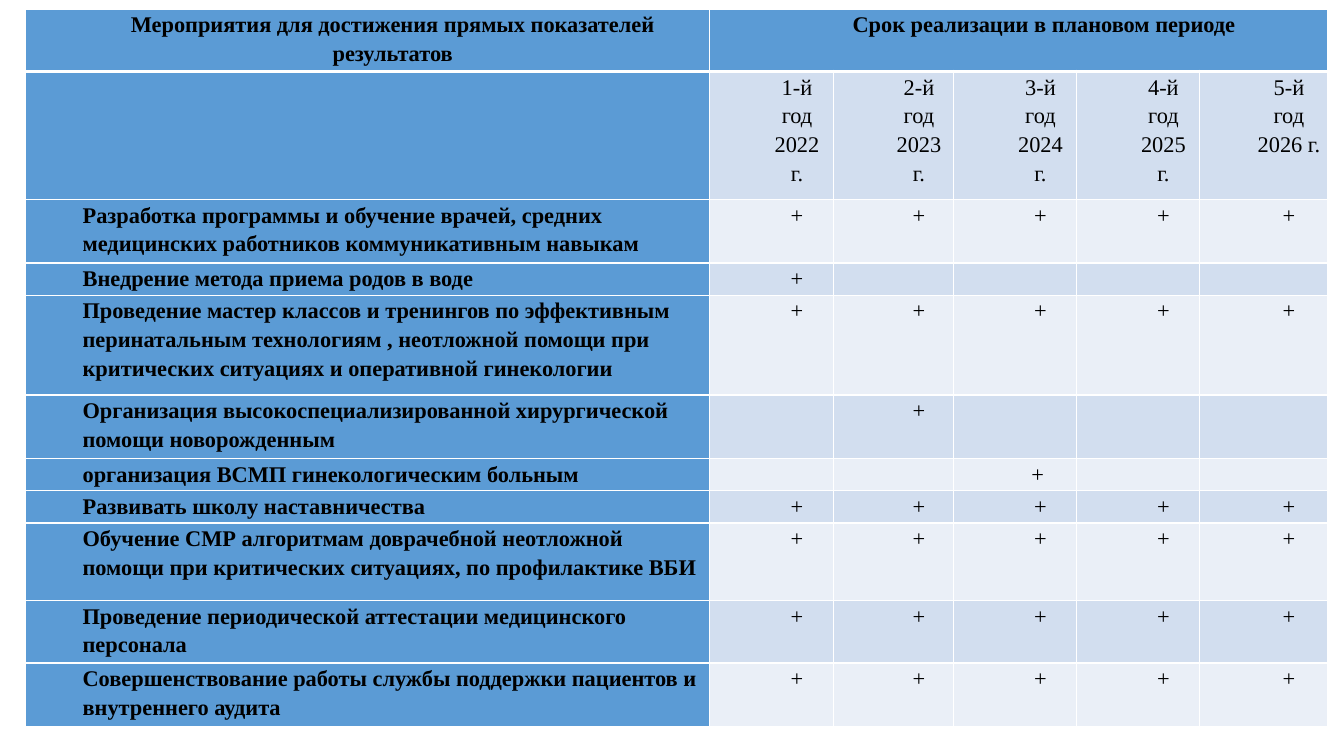
from lxml import etree
from pptx import Presentation
from pptx.dml.color import RGBColor
from pptx.enum.text import PP_ALIGN
from pptx.oxml.ns import qn
from pptx.util import Inches, Pt

CENTER, LEFT = PP_ALIGN.CENTER, PP_ALIGN.LEFT
BLUE = RGBColor(0x5B, 0x9B, 0xD5)
BAND_DARK = RGBColor(0xD2, 0xDE, 0xEF)
BAND_LIGHT = RGBColor(0xEA, 0xEF, 0xF7)
BLACK = RGBColor(0, 0, 0)
WHITE = RGBColor(0xFF, 0xFF, 0xFF)
FONT = "Times New Roman"

COLUMN_WIDTHS = [6.79, 1.23, 1.19, 1.22, 1.22, 1.27]
ROW_HEIGHTS = [0.62, 1.27, 0.63, 0.32, 0.99, 0.63, 0.32, 0.32, 0.77, 0.62, 0.63]
TABLE_BOX = (0.25, 0.09, sum(COLUMN_WIDTHS), sum(ROW_HEIGHTS))

YEARS = [f"{number}-й год\n{2021 + number} г." for number in range(1, 6)]
EVERY_YEAR = ["+"] * 5
PLAN = [
    ["Мероприятия для достижения прямых показателей результатов",
     "Срок реализации в плановом периоде", "", "", "", ""],
    ["", *YEARS],
    ["Разработка программы и обучение врачей, средних медицинских работников "
     "коммуникативным навыкам", *EVERY_YEAR],
    ["Внедрение метода приема родов в воде", "+", "", "", "", ""],
    ["Проведение мастер классов и тренингов по эффективным перинатальным "
     "технологиям , неотложной помощи при критических ситуациях и "
     "оперативной гинекологии", *EVERY_YEAR],
    ["Организация высокоспециализированной хирургической помощи новорожденным",
     "", "+", "", "", ""],
    ["организация ВСМП гинекологическим больным", "", "", "+ ", "", ""],
    ["Развивать школу наставничества", *EVERY_YEAR],
    ["Обучение СМР алгоритмам доврачебной неотложной помощи при критических "
     "ситуациях, по профилактике ВБИ", *EVERY_YEAR],
    ["Проведение периодической аттестации медицинского персонала", *EVERY_YEAR],
    ["Совершенствование работы службы поддержки пациентов и внутреннего аудита",
     *EVERY_YEAR],
]


def set_borders(cell, top, bottom):
    """Draw white borders around a cell, widths in points."""
    properties = cell._tc.get_or_add_tcPr()
    widths = {"a:lnL": 1, "a:lnR": 1, "a:lnT": top, "a:lnB": bottom}
    for position, (tag, width) in enumerate(widths.items()):
        line = etree.Element(qn(tag), w=str(Pt(width)))
        fill = etree.SubElement(line, qn("a:solidFill"))
        etree.SubElement(fill, qn("a:srgbClr"), val=str(WHITE))
        properties.insert(position, line)


def fill_cell(cell, text, color, bold, align):
    """Write text into a cell and format its paragraphs."""
    cell.margin_left = cell.margin_right = Inches(0.07)
    cell.margin_top = cell.margin_bottom = 0
    cell.fill.solid()
    cell.fill.fore_color.rgb = color
    cell.text = text
    for para in cell.text_frame.paragraphs:
        para.alignment = align
        para.line_spacing = 1.15
        para._p.get_or_add_pPr().set("marL", str(Inches(0.5)))
        para.font.name = FONT
        para.font.size = Pt(16)
        para.font.bold = bold
        para.font.color.rgb = BLACK


def add_plan_table(page, box):
    """Place the schedule of measures by year in the given box."""
    left, top, width, height = box
    table = page.shapes.add_table(
        len(PLAN), len(COLUMN_WIDTHS), *map(Inches, box)).table
    table.first_row = table.horz_banding = False
    for column, share in zip(table.columns, COLUMN_WIDTHS):
        column.width = Inches(width * share / sum(COLUMN_WIDTHS))
    for row, share in zip(table.rows, ROW_HEIGHTS):
        row.height = Inches(height * share / sum(ROW_HEIGHTS))
    for row, texts in enumerate(PLAN):
        band = BAND_DARK if row % 2 else BAND_LIGHT
        for column, text in enumerate(texts):
            heading = row == 0 or column == 0
            cell = table.cell(row, column)
            fill_cell(cell, text, BLUE if heading else band, heading,
                      LEFT if column == 0 and row else CENTER)
            set_borders(cell, 3 if row == 1 else 1, 3 if row == 0 else 1)
    table.cell(0, 1).merge(table.cell(0, len(COLUMN_WIDTHS) - 1))


def main():
    """Build the deck with one schedule page."""
    deck = Presentation()
    deck.slide_width, deck.slide_height = Inches(13.33), Inches(7.5)
    page = deck.slides.add_slide(deck.slide_layouts[6])
    add_plan_table(page, TABLE_BOX)
    deck.save("out.pptx")


if __name__ == "__main__":
    main()
